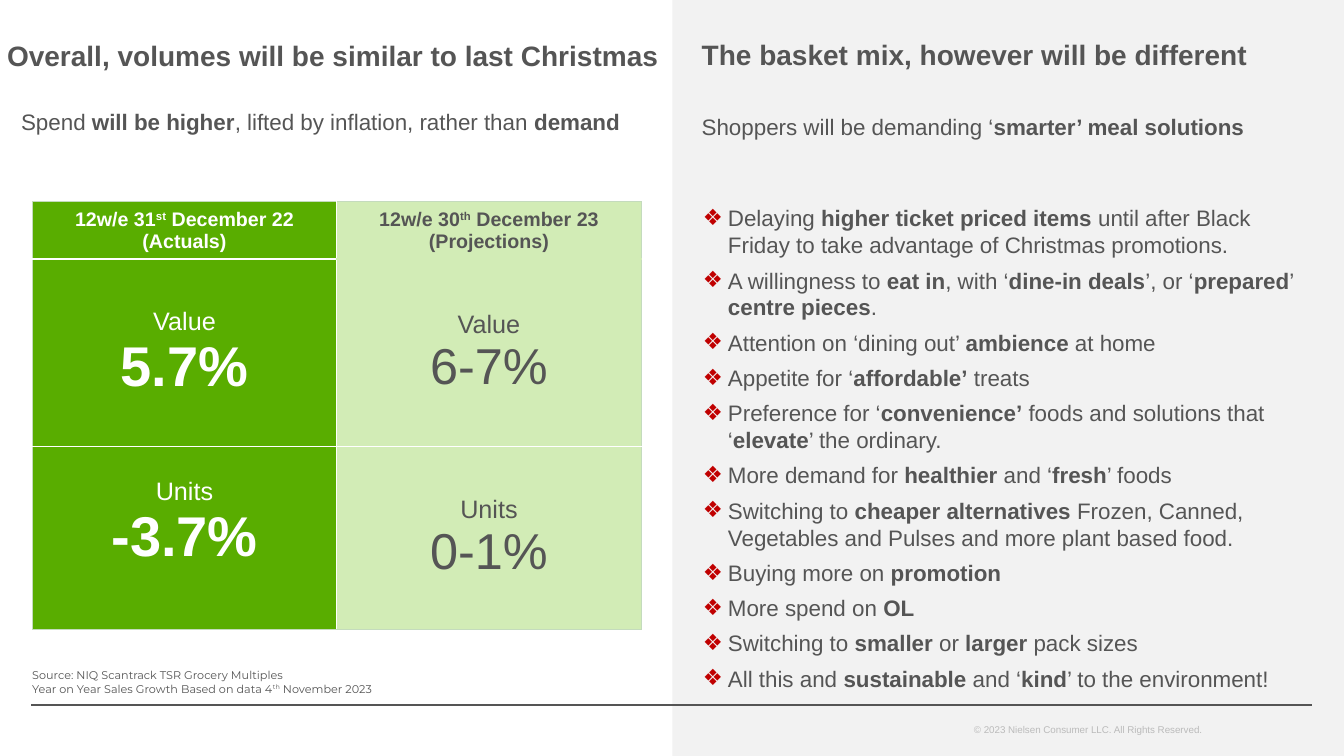
from lxml.etree import SubElement
from pptx import Presentation
from pptx.dml.color import RGBColor
from pptx.enum.shapes import MSO_CONNECTOR, MSO_SHAPE
from pptx.enum.text import MSO_ANCHOR, PP_ALIGN
from pptx.oxml import parse_xml
from pptx.oxml.ns import nsdecls, qn
from pptx.util import Inches, Pt

GREY, WHITE, GREEN, PALE, EDGE = "555555", "FFFFFF", "59AD00", "D2ECB6", "C4DBBD"


def tint(code):
    return RGBColor.from_string(code)


def write(frame, text, size=16, color=GREY, face="Arial", bold=False,
          align=PP_ALIGN.LEFT, after=0, bullet=None):
    para = frame.paragraphs[0]
    if para.runs:
        para = frame.add_paragraph()
    if bullet:
        props = para._p.get_or_add_pPr()
        props.set("marL", str(Inches(0.25)))
        props.set("indent", str(-Inches(0.25)))
        paint = SubElement(props, qn("a:buClr"))
        SubElement(paint, qn("a:srgbClr"), val="C00000")
        SubElement(props, qn("a:buFont"), typeface="Arial")
        SubElement(props, qn("a:buChar"), char=bullet)
    para.alignment = align
    para.space_after = Pt(after)
    for i, part in enumerate(text.split("*")):
        for j, bit in enumerate(part.split("^")):
            if not bit:
                continue
            run = para.add_run()
            run.text = bit
            font = run.font
            font.name, font.size = face, Pt(size)
            font.bold = bold or i % 2 == 1
            font.color.rgb = tint(color)
            if j % 2:
                font._element.set("baseline", "30000")


deck = Presentation()
deck.slide_width, deck.slide_height = Inches(13.33), Inches(7.5)
slide = deck.slides.add_slide(deck.slide_layouts[6])
slide.background.fill.solid()
slide.background.fill.fore_color.rgb = tint(WHITE)

panel = slide.shapes.add_shape(MSO_SHAPE.RECTANGLE, Inches(6.67), 0,
                               Inches(6.66), Inches(7.5))
panel.shadow.inherit = False
panel.fill.solid()
panel.fill.fore_color.rgb = tint("F2F2F2")
panel.line.fill.background()

rule = slide.shapes.add_connector(MSO_CONNECTOR.STRAIGHT, Inches(0.31),
                                  Inches(6.99), Inches(13.01), Inches(6.99))
rule.line.color.rgb = tint(GREY)
rule.line.width = Pt(1.5)
SubElement(rule._element.spPr, qn("a:effectLst"))

points = [
    "Delaying *higher ticket priced items *until after Black Friday to take advantage of Christmas promotions.",
    "A willingness to *eat in*, with ‘*dine-in deals*’, or ‘*prepared*’ *centre pieces*.",
    "Attention on ‘dining out’ *ambience* at home",
    "Appetite for ‘*affordable’* treats",
    "Preference for ‘*convenience’* foods and solutions that ‘*elevate*’ the ordinary.",
    "More demand for *healthier* and ‘*fresh*’ foods",
    "Switching to *cheaper alternatives* Frozen, Canned, Vegetables and Pulses and more plant based food.",
    "Buying more on *promotion*",
    "More spend on *OL*",
    "Switching to *smaller* or *larger* pack sizes",
    "All this and *sustainable* and ‘*kind*’ to the environment!",
]
source = ["Source: NIQ Scantrack TSR Grocery Multiples",
          "Year on Year Sales Growth Based on data 4^th^ November 2023"]
TOP, MID, LOW = MSO_ANCHOR.TOP, MSO_ANCHOR.MIDDLE, MSO_ANCHOR.BOTTOM
head = dict(size=20, bold=True)
boxes = [
    (0.07, 0.35, 6.6, 0.4, MID,
     ["Overall, volumes will be similar to last Christmas"], head),
    (6.96, 0.32, 6.07, 0.43, MID,
     ["The basket mix, however will be different"], head),
    (0.21, 1.02, 6.06, 0.48, TOP,
     ["Spend *will be higher*, lifted by inflation, rather than *demand*"], {}),
    (6.96, 1.02, 6.1, 0.48, MID,
     ["Shoppers will be demanding ‘*smarter’ meal solutions*"], {}),
    (6.97, 1.98, 6.05, 4.95, TOP, points, dict(after=6, bullet="❖")),
    (0.32, 6.55, 6.2, 0.4, LOW, source, dict(size=8, face="Montserrat")),
    (9.66, 7.13, 2.84, 0.22, TOP,
     ["© 2023 Nielsen Consumer LLC. All Rights Reserved."],
     dict(size=7, color="BBBBBB")),
]
for left, top, width, height, anchor, lines, style in boxes:
    box = slide.shapes.add_textbox(Inches(left), Inches(top),
                                   Inches(width), Inches(height))
    frame = box.text_frame
    frame.word_wrap = True
    frame.margin_left = frame.margin_right = 0
    frame.vertical_anchor = anchor
    for line in lines:
        write(frame, line, **style)

heights = [0.57, 1.86, 1.81]
grid = slide.shapes.add_table(3, 2, Inches(0.32), Inches(2), Inches(6.04),
                              Inches(sum(heights))).table
for row, height in zip(grid.rows, heights):
    row.height = Inches(height)
for col in grid.columns:
    col.width = Inches(3.02)

cells = [
    [["12w/e 31^st^ December 22", "(Actuals)"],
     ["12w/e 30^th^ December 23", "(Projections)"]],
    [["Value", "*5.7%*"], ["Value", "6-7%"]],
    [["Units", "*-3.7%*"], ["Units", "0-1%"]],
]
looks = [(GREEN, WHITE, 40), (PALE, GREY, 36)]
for r, row in enumerate(cells):
    for c, lines in enumerate(row):
        fill, ink, big = looks[c]
        cell = grid.cell(r, c)
        cell.fill.solid()
        cell.fill.fore_color.rgb = tint(fill)
        cell.vertical_anchor = MID
        sizes = (18, big) if r else (14, 14)
        for line, size in zip(lines, sizes):
            write(cell.text_frame, line, size=size, color=ink, bold=r == 0,
                  align=PP_ALIGN.CENTER)
        outer = {"L": c == 0, "R": c == 1, "T": r == 0, "B": r == 2}
        for k, (side, rim) in enumerate(outer.items()):
            joint = c == 1 and (r, side) in [(0, "B"), (1, "T")]
            shade = PALE if joint else EDGE if rim else WHITE
            width = Pt(0.5) if rim else Pt(1)
            cell._tc.get_or_add_tcPr().insert(k, parse_xml(
                f'<a:ln{side} {nsdecls("a")} w="{width}"><a:solidFill>'
                f'<a:srgbClr val="{shade}"/></a:solidFill></a:ln{side}>'))
grid.cell(2, 0).margin_bottom = Inches(0.34)

deck.save("out.pptx")
